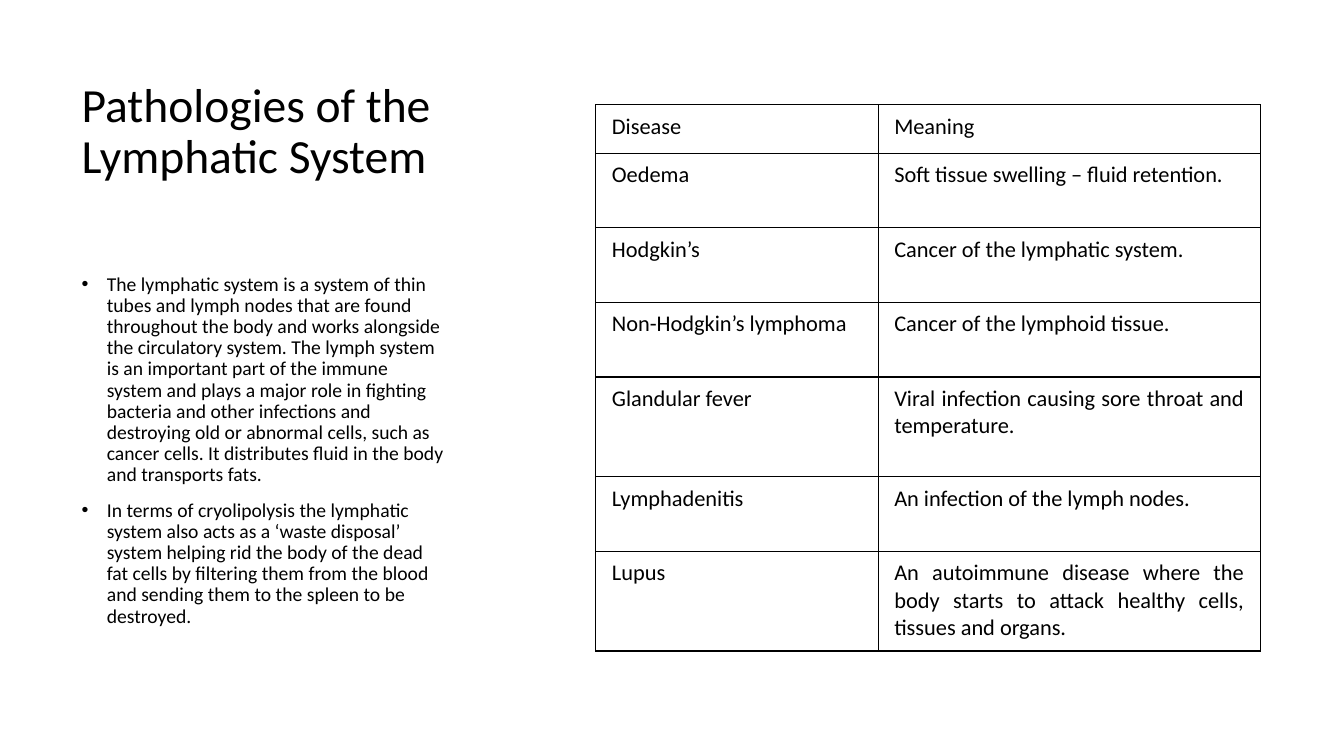
"""Builds a slide on the pathologies of the lymphatic system."""
from dataclasses import dataclass

import pptx
import pptx.dml.color
import pptx.enum.text
import pptx.oxml.ns
import pptx.util
from lxml import etree
from pptx.util import Inches


@dataclass(frozen=True)
class Theme:
    """Colours, font and type sizes of the slide."""
    ink: str = "000000"
    paper: str = "FFFFFF"
    font: str = "Calibri"
    title_size: int = 34
    body_size: int = 14
    table_size: int = 16
    border_width: int = 1


THEME = Theme()
ALIGN = pptx.enum.text.PP_ALIGN
TITLE = "Pathologies of the Lymphatic System"
POINTS = [
    "The lymphatic system is a system of thin tubes and lymph nodes that are found "
    "throughout the body and works alongside the circulatory system. The lymph system "
    "is an important part of the immune system and plays a major role in fighting "
    "bacteria and other infections and destroying old or abnormal cells, such as cancer "
    "cells. It distributes fluid in the body and transports fats.",
    "In terms of cryolipolysis the lymphatic system also acts as a ‘waste disposal’ "
    "system helping rid the body of the dead fat cells by filtering them from the blood "
    "and sending them to the spleen to be destroyed.",
]
DISEASES = [
    ("Disease", "Meaning", 0.48),
    ("Oedema", "Soft tissue swelling – fluid retention.", 0.74),
    ("Hodgkin’s", "Cancer of the lymphatic system.", 0.74),
    ("Non-Hodgkin’s lymphoma", "Cancer of the lymphoid tissue.", 0.74),
    ("Glandular fever", "Viral infection causing sore throat and temperature.", 0.99),
    ("Lymphadenitis", "An infection of the lymph nodes.", 0.74),
    ("Lupus", "An autoimmune disease where the body starts to attack healthy cells, "
     "tissues and organs.", 0.99),
]
COLUMN_WIDTHS = (2.8, 3.79)


def style_paragraph(paragraph, size, align):
    """Set the font and alignment of one paragraph."""
    paragraph.alignment = align
    paragraph.font.name = THEME.font
    paragraph.font.size = pptx.util.Pt(size)
    paragraph.font.color.rgb = pptx.dml.color.RGBColor.from_string(THEME.ink)


def place(placeholder, left, top, width, height):
    """Move a placeholder and return its text frame at a fixed text size."""
    placeholder.left, placeholder.top = Inches(left), Inches(top)
    placeholder.width, placeholder.height = Inches(width), Inches(height)
    frame = placeholder.text_frame
    frame.auto_size = pptx.enum.text.MSO_AUTO_SIZE.NONE
    frame.word_wrap = True
    return frame


def fill_title(placeholder):
    """Write the heading, raised within its box by a deeper bottom margin."""
    frame = place(placeholder, 0.71, 0.69, 3.83, 1.77)
    frame.text = TITLE
    frame.vertical_anchor = pptx.enum.text.MSO_ANCHOR.MIDDLE
    frame.margin_bottom = Inches(0.57)
    heading = frame.paragraphs[0]
    heading.line_spacing = 0.9
    style_paragraph(heading, THEME.title_size, ALIGN.LEFT)


def fill_points(placeholder):
    """Write the bulleted explanation."""
    frame = place(placeholder, 0.71, 2.67, 3.83, 4.14)
    frame.text = "\n".join(POINTS)
    for point in frame.paragraphs:
        style_paragraph(point, THEME.body_size, ALIGN.LEFT)
        point.line_spacing = 0.9
        point.space_before = pptx.util.Pt(10)
        properties = point._p.get_or_add_pPr()
        properties.set("marL", str(Inches(0.25)))
        properties.set("indent", str(Inches(-0.25)))
        bullet = etree.SubElement(properties, pptx.oxml.ns.qn("a:buChar"))
        bullet.set("char", "•")


def add_borders(cell):
    """Draw a thin line on all four sides of a cell."""
    properties = cell._tc.get_or_add_tcPr()
    for side in ("a:lnL", "a:lnR", "a:lnT", "a:lnB"):
        line = etree.SubElement(properties, pptx.oxml.ns.qn(side))
        line.set("w", str(pptx.util.Pt(THEME.border_width)))
        fill = etree.SubElement(line, pptx.oxml.ns.qn("a:solidFill"))
        etree.SubElement(fill, pptx.oxml.ns.qn("a:srgbClr")).set("val", THEME.ink)


def fill_cell(cell, text):
    """Write and format one table cell."""
    cell.text = text
    cell.margin_left = cell.margin_right = Inches(0.16)
    cell.margin_top = cell.margin_bottom = Inches(0.08)
    style_paragraph(cell.text_frame.paragraphs[0], THEME.table_size, ALIGN.JUSTIFY)
    add_borders(cell)
    cell.fill.background()


def add_disease_table(slide):
    """Add the table of diseases and their meanings."""
    height = sum(row_height for _, _, row_height in DISEASES)
    table = slide.shapes.add_table(
        len(DISEASES), len(COLUMN_WIDTHS), Inches(5.91), Inches(1.04),
        Inches(sum(COLUMN_WIDTHS)), Inches(height)).table
    table.first_row = table.horz_banding = False
    for column, width in zip(table.columns, COLUMN_WIDTHS):
        column.width = Inches(width)
    for row, (disease, meaning, row_height) in zip(table.rows, DISEASES):
        row.height = Inches(row_height)
        for cell, text in zip(row.cells, (disease, meaning)):
            fill_cell(cell, text)


def main():
    """Build and save the slide."""
    presentation = pptx.Presentation()
    presentation.slide_width, presentation.slide_height = Inches(13.33), Inches(7.5)
    slide = presentation.slides.add_slide(presentation.slide_layouts[1])
    background = slide.background.fill
    background.solid()
    background.fore_color.rgb = pptx.dml.color.RGBColor.from_string(THEME.paper)
    fill_title(slide.shapes.title)
    fill_points(slide.placeholders[1])
    add_disease_table(slide)
    presentation.save("out.pptx")


if __name__ == "__main__":
    main()
